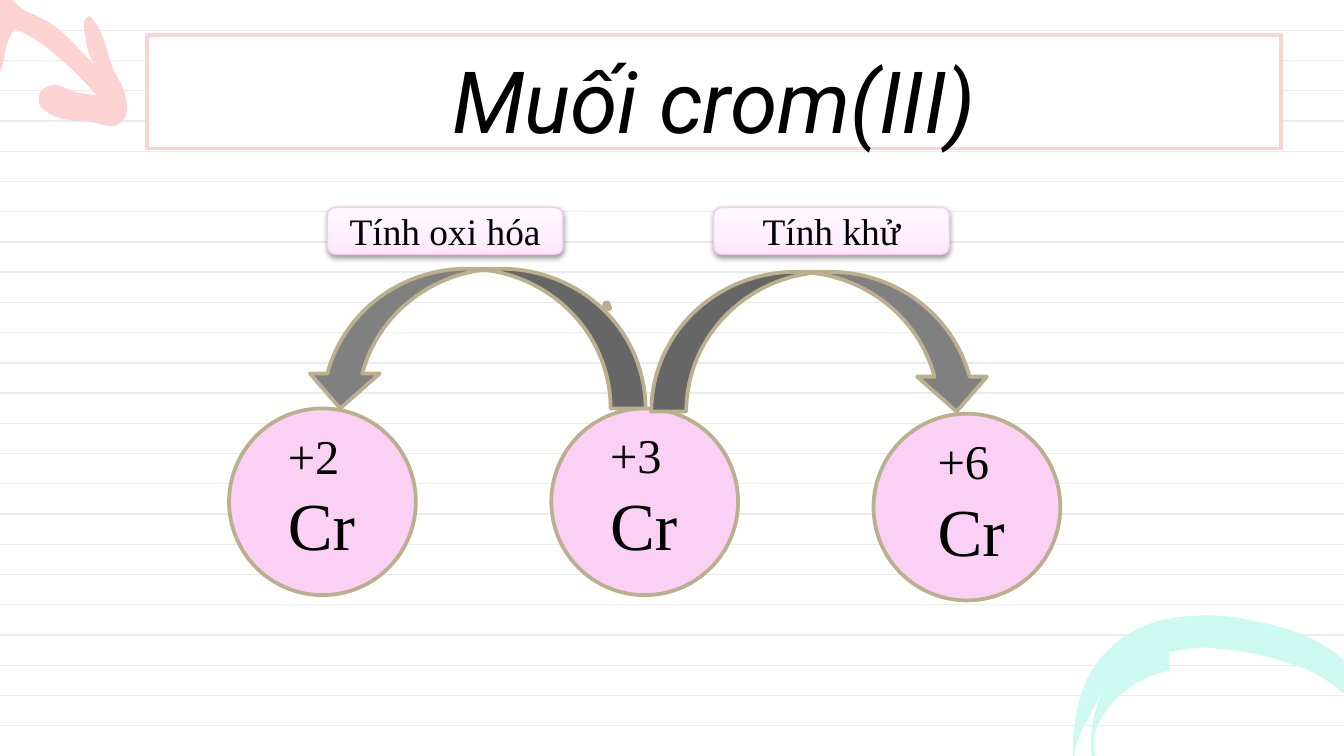
from lxml.etree import SubElement
from pptx import Presentation
from pptx.dml.color import RGBColor
from pptx.enum.shapes import MSO_CONNECTOR, MSO_SHAPE
from pptx.enum.text import MSO_ANCHOR, MSO_AUTO_SIZE, PP_ALIGN
from pptx.oxml import parse_xml
from pptx.oxml.ns import nsdecls, qn
from pptx.util import Cm, Pt

# Content: positions and sizes in cm
TITLE = "Muối crom(III)"
TITLE_BOX = (2.78, 0.66, 21.43, 2.15)
SLIDE_SIZE = (25.4, 14.29)
RULE_COUNT = 24
CIRCLE_SIZE = 3.53
# oxidation state, circle left and top, label box
STATES = [
    ("+2", (4.33, 7.72), (5.19, 7.92, 2.0, 3.0)),
    ("+3", (10.42, 7.72), (11.28, 7.91, 1.83, 2.9)),
    ("+6", (16.51, 7.82), (17.47, 8.03, 2.06, 2.9)),
]
ELEMENT = "Cr"
# preset, box, rotation, fill
ARROWS = [
    (MSO_SHAPE.CURVED_DOWN_ARROW, (12.31, 5.14, 6.43, 2.64), 0, "arrow"),
    (MSO_SHAPE.CURVED_DOWN_ARROW, (11.41, 5.72, 0.13, 0.13), 0, "cream"),
    (MSO_SHAPE.CURVED_UP_ARROW, (5.77, 5.08, 6.43, 2.64), 180, "arrow"),
]
PROPERTIES = [("Tính oxi hóa", 6.19), ("Tính khử", 13.49)]
PROPERTY_TOP, PROPERTY_SIZE = 3.92, (4.45, 0.89)

COLORS = {
    "white": "FFFFFF", "black": "000000", "rule": "EBEBEB", "pink": "FCD3D1",
    "mint": "CCFAF1", "circle": "FBD0F5", "edge": "BBB08D", "arrow": "808080",
    "cream": "FDEEBF", "tag_edge": "F7CAF0",
}
TAG_STOPS = [(0, "FFE7FB"), (35, "FFEEFC"), (100, "FFF8FE")]

# Doodle outlines in hundredths of an inch, one list per contour
DOODLES = [
    ("pink", [
        [(0, 17), (0, 20), (-22, 48), (-51, 51), (-60, 45), (-62, 40), (-55, 26),
         (-36, 15), (-2, 16)],
        [(82, 63), (80, 60), (63, 41), (40, 19), (12, 3), (3, -7), (2, -11),
         (-26, -43), (-60, -54), (-117, -52), (-121, -47), (-117, -36), (-108, -34),
         (-69, -34), (-34, -26), (-10, -9), (-8, -6), (-26, -6), (-55, 0), (-72, 29),
         (-69, 53), (-52, 70), (-4, 60), (8, 26), (11, 21), (27, 30), (59, 57),
         (79, 79), (82, 75)],
    ]),
    ("pink", [
        [(93, 70), (85, 53), (71, 17), (67, 12), (65, 13), (64, 30), (77, 63),
         (80, 72), (58, 69), (36, 64), (30, 69), (30, 79), (36, 84), (69, 91),
         (87, 93), (92, 89)],
    ]),
    ("mint", [
        [(896, 482), (908, 483), (951, 491), (988, 507), (1024, 558), (1015, 583),
         (990, 610), (927, 629), (874, 619), (841, 601), (818, 572), (814, 556),
         (854, 504), (870, 499), (870, 485)],
        [(896, 458), (841, 471), (813, 498), (800, 537), (798, 564), (799, 593),
         (811, 633), (825, 647), (825, 622), (803, 593), (799, 567), (820, 513),
         (813, 539), (813, 571), (824, 608), (892, 650), (926, 654), (977, 642),
         (1024, 582), (1025, 552), (1023, 529), (1004, 496), (928, 461)],
    ]),
]
OUTLINE_DETAIL = 100

prs = Presentation()
prs.slide_width, prs.slide_height = (Cm(side) for side in SLIDE_SIZE)
slide = prs.slides.add_slide(prs.slide_layouts[6])
shapes = slide.shapes


def rgb(name):
    return RGBColor.from_string(COLORS[name])


def cm(values):
    return [Cm(value) for value in values]


def apply(target, formats):
    for name, value in formats.items():
        setattr(target, name, value)


def paint(shape, fill=None, edge=None, width=2):
    shape.shadow.inherit = False
    if fill:
        shape.fill.solid()
        shape.fill.fore_color.rgb = rgb(fill)
    if edge:
        shape.line.color.rgb = rgb(edge)
        shape.line.width = Pt(width)
    else:
        shape.line.fill.background()


def write(frame, lines, font="Times New Roman", align=PP_ALIGN.LEFT, **formats):
    apply(frame, {"word_wrap": True, **formats})
    for index, (text, size, italic) in enumerate(lines):
        paragraph = frame.add_paragraph() if index else frame.paragraphs[0]
        paragraph.alignment = align
        run = paragraph.add_run()
        run.text = text
        apply(run.font, {"name": font, "size": Pt(size), "italic": italic})
        run.font.color.rgb = rgb("black")


def heading(before, here, after, chord):
    """Tangent at a point; sharp corners keep the direction of the chord."""
    back, ahead = here - before, after - here
    turn = back.conjugate() * ahead
    direction = back / abs(back) ** 2 + ahead / abs(ahead) ** 2
    if turn.real < 0.4 * abs(turn):
        direction = chord
    return direction / abs(direction) * abs(chord)


def bend(outline):
    """Turn the straight sides of a freeform into smooth cubic curves."""
    contours = []
    for step in outline._element.iter(qn("a:moveTo"), qn("a:lnTo")):
        if step.tag == qn("a:moveTo"):
            contours.append([])
        contours[-1].append((step, complex(int(step[0].get("x")), int(step[0].get("y")))))
    for contour in contours:
        points = [point for _, point in contour[:-1]]  # last one repeats the start
        count = len(points)
        for i, (side, _) in enumerate(contour[1:]):
            a, b, c, d = (points[(i + k) % count] for k in (-1, 0, 1, 2))
            curve = side.makeelement(qn("a:cubicBezTo"))
            for spot in (b + heading(a, b, c, c - b) / 3,
                         c - heading(b, c, d, c - b) / 3, c):
                SubElement(curve, qn("a:pt"), x=str(round(spot.real)),
                           y=str(round(spot.imag)))
            side.getparent().replace(side, curve)


# Ruled paper
rule_gap = SLIDE_SIZE[1] / (RULE_COUNT + 1)
for number in range(1, RULE_COUNT + 1):
    y = Cm(number * rule_gap)
    rule = shapes.add_connector(MSO_CONNECTOR.STRAIGHT, 0, y, prs.slide_width, y)
    rule.line.color.rgb = rgb("rule")
    rule.line.width = Pt(0.75)
    SubElement(rule._element.spPr, qn("a:effectLst"))

# Corner doodles
for color, contours in DOODLES:
    builder = shapes.build_freeform(scale=Cm(0.0254) / OUTLINE_DETAIL)
    outlines = [[(x * OUTLINE_DETAIL, y * OUTLINE_DETAIL) for x, y in contour]
                for contour in contours]
    builder = shapes.build_freeform(*outlines[0][0], scale=Cm(0.0254) / OUTLINE_DETAIL)
    for index, (start, *others) in enumerate(outlines):
        if index:
            builder.move_to(*start)
        builder.add_line_segments([*others, start], close=True)
    doodle = builder.convert_to_shape()
    bend(doodle)
    paint(doodle, color)

# Title
title = shapes.add_textbox(*cm(TITLE_BOX))
paint(title, "white", "pink", 2)
margins = {f"margin_{side}": Cm(0.25) for side in ("left", "right", "top", "bottom")}
write(title.text_frame, [(TITLE, 46, True)], "Roboto", PP_ALIGN.CENTER,
      vertical_anchor=MSO_ANCHOR.TOP, **margins)

# Circles, then the arrows between them, then their labels
for _, corner, _ in STATES:
    circle = shapes.add_shape(MSO_SHAPE.FLOWCHART_CONNECTOR,
                              *cm(corner), *cm([CIRCLE_SIZE] * 2))
    paint(circle, "circle", "edge")
for preset, box, rotation, fill in ARROWS:
    arrow = shapes.add_shape(preset, *cm(box))
    arrow.rotation = rotation
    paint(arrow, fill, "edge")
for state, _, box in STATES:
    label = shapes.add_textbox(*cm(box))
    write(label.text_frame, [(state, 26, False), (ELEMENT, 36, False)],
          auto_size=MSO_AUTO_SIZE.SHAPE_TO_FIT_TEXT)

# Property tags with gradient and soft shadow
stops = "".join(f'<a:gs pos="{at * 1000}"><a:srgbClr val="{color}"/></a:gs>'
                for at, color in TAG_STOPS)
for text, left in PROPERTIES:
    tag = shapes.add_shape(MSO_SHAPE.ROUNDED_RECTANGLE,
                           *cm((left, PROPERTY_TOP, *PROPERTY_SIZE)))
    paint(tag, None, "tag_edge", 0.75)
    properties = tag._element.spPr
    properties.find(qn("a:prstGeom")).addnext(parse_xml(
        f'<a:gradFill {nsdecls("a")} rotWithShape="1"><a:gsLst>{stops}</a:gsLst>'
        '<a:lin ang="16200000" scaled="0"/></a:gradFill>'))
    properties.find(qn("a:effectLst")).append(parse_xml(
        f'<a:outerShdw {nsdecls("a")} blurRad="{Pt(3.1)}" dist="{Pt(1.6)}" '
        'dir="5400000" rotWithShape="0"><a:srgbClr val="000000">'
        '<a:alpha val="38000"/></a:srgbClr></a:outerShdw>'))
    write(tag.text_frame, [(text, 20, False)], align=PP_ALIGN.CENTER,
          vertical_anchor=MSO_ANCHOR.MIDDLE)

prs.save("out.pptx")
